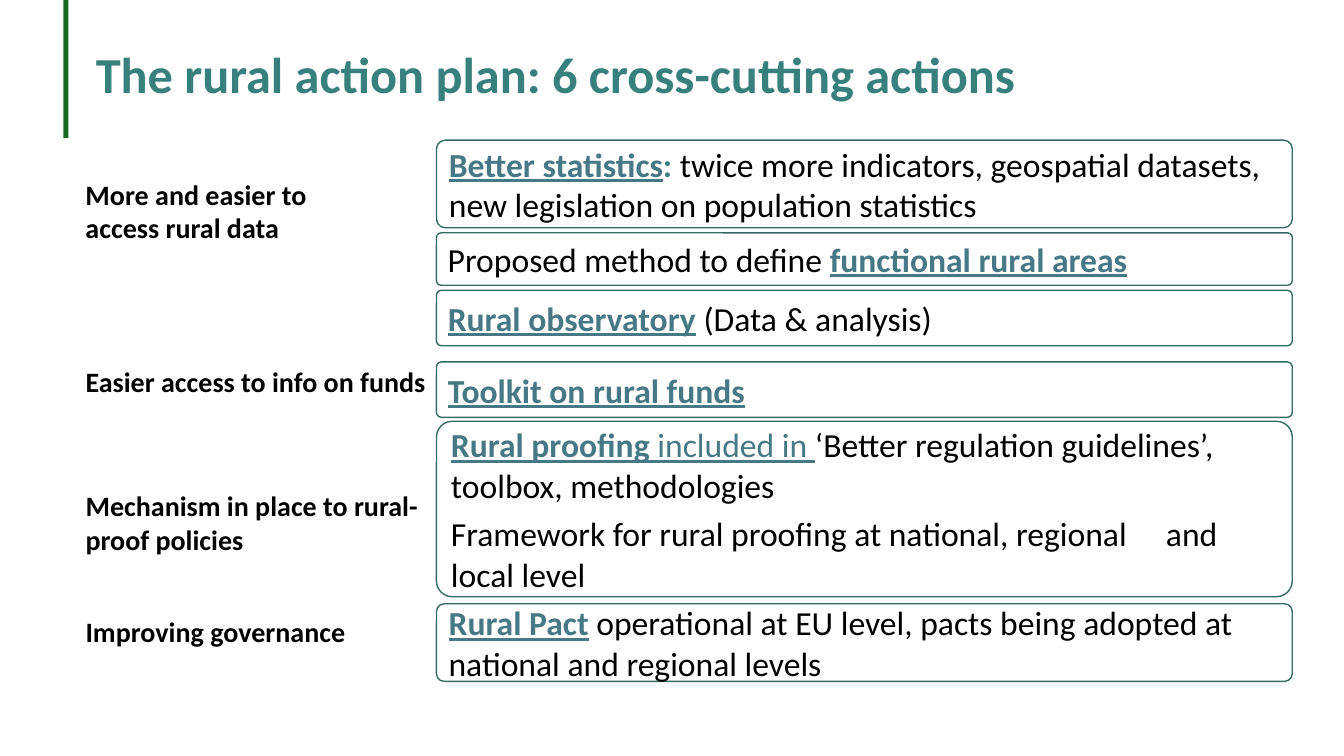
from dataclasses import dataclass

from lxml import etree
from pptx import Presentation
from pptx.dml.color import RGBColor
from pptx.enum.shapes import MSO_SHAPE
from pptx.enum.text import MSO_ANCHOR, MSO_AUTO_SIZE, PP_ALIGN
from pptx.oxml.ns import qn
from pptx.util import Pt

RECTANGLE = MSO_SHAPE.RECTANGLE
ROUNDED = MSO_SHAPE.ROUNDED_RECTANGLE
MIDDLE, TOP = MSO_ANCHOR.MIDDLE, MSO_ANCHOR.TOP
NO_FIT, GROW = MSO_AUTO_SIZE.NONE, MSO_AUTO_SIZE.SHAPE_TO_FIT_TEXT
LEFT = PP_ALIGN.LEFT


@dataclass(frozen=True)
class Theme:
    font: str = "Calibri"
    title_size: int = 36
    action_size: int = 24
    label_size: int = 20
    accent: str = "38807E"
    link: str = "467886"
    text: str = "000000"
    outline: str = "356C62"
    bar: str = "196B24"
    paper: str = "FFFFFF"


THEME = Theme()

# Run styles: colour, bold, underline
PLAIN = (THEME.text, False, False)
STRONG = (THEME.text, True, False)
HEADING = (THEME.accent, True, False)
LINK = (THEME.link, True, True)
LIGHT_LINK = (THEME.link, False, True)

ACTION_LEFT, ACTION_WIDTH = 311.76, 611.28
LABEL_LEFT = 54
AND_TAB = 510.7

# Actions: top, height, corner, space after, paragraphs of runs
ACTIONS = [
    (100.08, 62.64, 0.1, 3, [[
        ("Better statistics", LINK), (": ", HEADING),
        ("twice more indicators, geospatial datasets, "
         "new legislation on population statistics", PLAIN)]]),
    (166.32, 37.44, 0.09, 0, [[
        ("Proposed method to define ", PLAIN), ("functional rural areas", LINK)]]),
    (207.36, 39.6, 0.09, 6, [[
        ("Rural observatory", LINK), (" ", HEADING), ("(Data & analysis)", PLAIN)]]),
    (258.48, 39.6, 0.09, 6, [[("Toolkit on rural funds", LINK)]]),
    (300.96, 125.28, 0.09, 6, [
        [("Rural proofing ", LINK), ("included in ", LIGHT_LINK),
         ("‘Better regulation guidelines’, toolbox, methodologies", PLAIN)],
        [("Framework for rural proofing at national, regional\tand local level", PLAIN)]]),
    (431.28, 55.44, 0.1, 3, [[
        ("Rural Pact", LINK), (" ", HEADING),
        ("operational at EU level, pacts being adopted at "
         "national and regional levels", PLAIN)]]),
]

# Labels: top, width, height, text
LABELS = [
    (123.12, 190.08, 79.92, "More and easier to access rural data"),
    (257.04, 257.76, 55.44, "Easier access to info on funds"),
    (345.6, 257.76, 55.44, "Mechanism in place to rural-proof policies"),
    (435.6, 231.84, 31.68, "Improving governance"),
]


class SlideBuilder:
    def __init__(self, slide, theme):
        self.slide = slide
        self.theme = theme

    def add_text(self, shape, paragraphs, size, anchor, fit=NO_FIT, after=0, line_spacing=1.0):
        frame = shape.text_frame
        frame.word_wrap = True
        frame.auto_size = fit
        frame.vertical_anchor = anchor
        for index, runs in enumerate(paragraphs):
            paragraph = frame.add_paragraph() if index else frame.paragraphs[0]
            if any("\t" in text for text, _ in runs):
                self.add_tab(paragraph, AND_TAB)
            paragraph.alignment = LEFT
            paragraph.space_before = Pt(0)
            paragraph.space_after = Pt(after)
            paragraph.line_spacing = line_spacing
            for text, (colour, bold, underline) in runs:
                run = paragraph.add_run()
                run.text = text
                font = run.font
                font.name = self.theme.font
                font.size = Pt(size)
                font.bold = bold
                font.underline = underline
                font.color.rgb = RGBColor.from_string(colour)

    def add_tab(self, paragraph, position):
        properties = paragraph._p.get_or_add_pPr()
        tabs = etree.SubElement(properties, qn("a:tabLst"))
        etree.SubElement(tabs, qn("a:tab"), pos=str(int(Pt(position))), algn="l")

    def title(self, left, top, width, height, text):
        shape = self.slide.shapes.title
        shape.left, shape.top = Pt(left), Pt(top)
        shape.width, shape.height = Pt(width), Pt(height)
        self.add_text(shape, [[(text, HEADING)]], self.theme.title_size, MIDDLE,
                      line_spacing=0.9)

    def box(self, kind, left, top, width, height, fill, outline=None):
        shape = self.slide.shapes.add_shape(kind, Pt(left), Pt(top), Pt(width), Pt(height))
        shape.shadow.inherit = False
        shape.fill.solid()
        shape.fill.fore_color.rgb = RGBColor.from_string(fill)
        if outline:
            shape.line.color.rgb = RGBColor.from_string(outline)
            shape.line.width = Pt(1)
        else:
            shape.line.fill.background()
        return shape

    def action(self, top, height, corner, after, paragraphs):
        shape = self.box(ROUNDED, ACTION_LEFT, top, ACTION_WIDTH, height,
                         self.theme.paper, self.theme.outline)
        shape.adjustments[0] = corner
        self.add_text(shape, paragraphs, self.theme.action_size, MIDDLE, after=after)

    def label(self, top, width, height, text):
        shape = self.slide.shapes.add_textbox(Pt(LABEL_LEFT), Pt(top), Pt(width), Pt(height))
        self.add_text(shape, [[(text, STRONG)]], self.theme.label_size, TOP, GROW)


def main():
    presentation = Presentation()
    presentation.slide_width, presentation.slide_height = Pt(960), Pt(540)
    title_only = presentation.slide_layouts[5]
    builder = SlideBuilder(presentation.slides.add_slide(title_only), THEME)

    # Title and its accent bar
    builder.box(RECTANGLE, 45.36, 0, 3.6, 98.6, THEME.bar)
    builder.title(61.2, 7.92, 781.92, 94.32, "The rural action plan: 6 cross-cutting actions")

    # Actions on the right
    for action in ACTIONS:
        builder.action(*action)

    # Themes on the left
    for label in LABELS:
        builder.label(*label)

    presentation.save("out.pptx")


if __name__ == "__main__":
    main()
